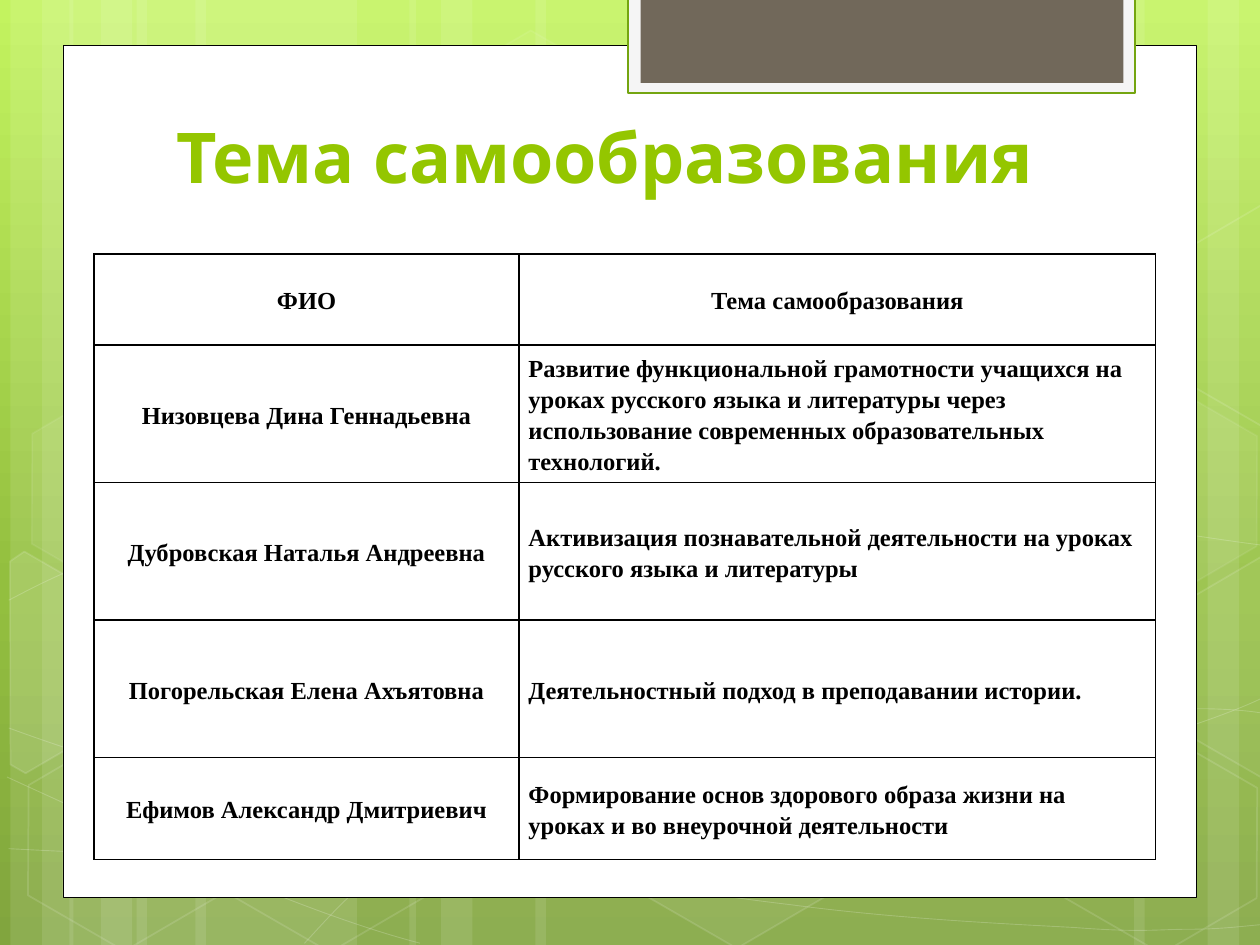
from dataclasses import dataclass
from typing import Optional

from lxml.etree import SubElement
from pptx import Presentation
from pptx.enum.shapes import MSO_SHAPE as Shape
from pptx.enum.text import MSO_ANCHOR as Anchor, PP_ALIGN as Align
from pptx.oxml.ns import qn
from pptx.util import Pt

WHITE, BLACK = "FFFFFF", "000000"
Points = list[tuple[float, float]]


@dataclass
class Look:
    fill: Optional[str] = None
    fill_alpha: int = 100
    line: Optional[str] = None
    line_width: float = 1
    line_alpha: int = 100


@dataclass
class Block:
    left: float
    top: float
    width: float
    height: float
    look: Look
    kind: Shape = Shape.RECTANGLE
    rotation: float = 0


@dataclass
class Outline:
    left: float
    top: float
    points: Points
    look: Look
    rotation: float = 30


@dataclass
class Lettering:
    font: str
    size: float
    color: str


def veil(fill_alpha: int, line_alpha: int) -> Look:
    return Look(WHITE if fill_alpha else None, fill_alpha, WHITE, 1, line_alpha)


def hexagon(left: float, top: float, fill_alpha: int, line_alpha: int) -> Block:
    return Block(left, top, 126, 109.4, veil(fill_alpha, line_alpha), Shape.HEXAGON, 30)


STRIP = Look(WHITE, 10)
STRIPS = [Block(left, 0, width, 540, STRIP, rotation=turn) for left, width, turn in [
    (78, 126, 0), (6, 36, 0), (24, 60, 0), (111.6, 126, 0), (39.6, 36, 0), (57.6, 60, 0),
    (528, 126, 180), (690, 36, 180), (648, 60, 180), (306, 222, 0), (234, 36, 0), (252, 60, 0)]]
CURVE_LOOK = Look(None, 100, WHITE, 0.5, 20)
CURVES = [
    [(5, 485), (44, 487), (83, 489), (137, 488), (191, 487), (258, 486), (330, 479),
     (402, 472), (504, 458), (570, 444), (636, 431), (703, 409), (725, 397)],
    [(5, 343), (26, 332), (47, 321), (87, 310), (128, 300), (186, 284), (250, 279),
     (314, 274), (392, 273), (471, 279), (550, 284), (682, 307), (725, 312)],
    [(4, 444), (91, 484), (178, 523), (240, 539)],
    [(5, 416), (27, 424), (50, 432), (92, 444), (134, 454), (197, 472), (257, 485),
     (317, 497), (392, 510), (452, 517), (512, 525), (576, 528), (614, 530),
     (652, 533), (662, 531), (680, 531), (699, 531), (712, 529), (725, 528)],
    [(174, 539), (187, 525), (200, 510), (217, 498), (235, 485), (259, 470), (279, 460),
     (300, 450), (312, 446), (338, 438), (364, 431), (413, 421), (438, 416),
     (464, 411), (467, 411), (490, 410), (512, 408), (547, 405), (572, 405),
     (597, 404), (638, 405), (638, 405), (654, 405), (670, 405), (686, 405),
     (699, 405), (711, 406), (718, 407), (724, 408), (722, 407), (724, 408)],
]
HEXAGONS = [
    hexagon(240.5, 26, 4, 8), hexagon(357.8, 424, 6, 12), hexagon(7.9, 425.5, 0, 12),
    hexagon(10, 224.6, 7, 8), hexagon(125.3, 426.2, 0, 12), hexagon(542.2, 326.2, 10, 12),
    hexagon(600.5, 427, 0, 12), hexagon(600.5, 226, 7, 8)]
LEFT_CUT = [(0, 9), (4.3, 0), (68.2, 0), (99.2, 55.2), (68.3, 109.4), (58.3, 109.4)]
RIGHT_CUT = [(0, 54.5), (31, 0), (37.7, 0), (97.9, 104.3), (94.9, 109.4), (31.7, 109.4)]
CUT_HEXAGONS = [
    Outline(-23.8, 330.5, LEFT_CUT, veil(10, 12)),
    Outline(660.2, 319.7, RIGHT_CUT, veil(4, 12)),
    Outline(660.2, 118.8, RIGHT_CUT, veil(0, 12))]
PANELS = [
    Block(36, 26, 648, 487, Look(WHITE, line=BLACK, line_width=0.5)),
    Block(359, -1.4, 289.5, 54.7, Look("F5F5F5", line="74A510", line_width=1.25)),
    Block(366, -1.4, 276, 48.8, Look("71685A"))]
TITLE = Lettering("League Spartan", 40, "94C600")
BODY = Lettering("Times New Roman", 14, BLACK)
COLUMNS = [242.8, 363.8]
ROWS = [
    (52, "ФИО", "Тема самообразования"),
    (78.6, "Низовцева Дина Геннадьевна",
     "Развитие функциональной грамотности учащихся на уроках русского языка и литературы "
     "через использование современных образовательных технологий."),
    (78.6, "Дубровская Наталья Андреевна",
     "Активизация познавательной деятельности на уроках русского языка и литературы"),
    (78.6, "Погорельская Елена Ахъятовна", "Деятельностный подход в преподавании истории."),
    (58.3, "Ефимов Александр Дмитриевич",
     "Формирование основ здорового образа жизни на уроках и во внеурочной деятельности")]


def add_color(parent, color: str, alpha: int = 100) -> None:
    node = SubElement(parent, qn("a:srgbClr"), val=color)
    if alpha < 100:
        SubElement(node, qn("a:alpha"), val=str(alpha * 1000))


def paint(fill, color: Optional[str], alpha: int = 100) -> None:
    if color is None:
        fill.background()
        return
    fill.solid()
    add_color(fill._xPr.find(qn("a:solidFill")), color, alpha)


def style(shape, look: Look) -> None:
    shape.shadow.inherit = False
    paint(shape.fill, look.fill, look.fill_alpha)
    paint(shape.line.fill, look.line, look.line_alpha)
    if look.line:
        shape.line.width = Pt(look.line_width)


def draw_block(page, block: Block) -> None:
    shape = page.shapes.add_shape(
        block.kind, Pt(block.left), Pt(block.top), Pt(block.width), Pt(block.height))
    shape.rotation = block.rotation
    if block.kind == Shape.HEXAGON:
        shape.adjustments[0] = 0.285
    style(shape, block.look)


def add_freeform(page, points: Points, look: Look, closed: bool):
    start, *rest = [(Pt(x), Pt(y)) for x, y in points]
    builder = page.shapes.build_freeform(*start)
    builder.add_line_segments(rest, close=closed)
    shape = builder.convert_to_shape()
    style(shape, look)
    return shape


def draw_outline(page, outline: Outline) -> None:
    points = [(outline.left + x, outline.top + y) for x, y in outline.points]
    add_freeform(page, points, outline.look, True).rotation = outline.rotation


def draw_curve(page, knots: Points) -> None:
    shape = add_freeform(page, knots, CURVE_LOOK, False)
    segments = list(shape._element.iter(qn("a:lnTo")))
    track = segments[0].getparent()
    for first in range(0, len(segments), 3):
        bend = SubElement(track, qn("a:cubicBezTo"))
        for segment in segments[first:first + 3]:
            bend.append(segment[0])
            track.remove(segment)


def write(para, text: str, lettering: Lettering, align: Align) -> None:
    para.alignment = align
    span = para.add_run()
    span.text = text
    span.font.name, span.font.size, span.font.bold = lettering.font, Pt(lettering.size), True
    paint(span.font.fill, lettering.color)


def draw_background(page) -> None:
    fill = page.background.fill
    fill.gradient()
    fill.gradient_angle = 270
    stops = next(page._element.iter(qn("a:gsLst")))
    for stop in list(stops):
        stops.remove(stop)
    for place, color in [(0, "C3F35F"), (62, "93BF3F"), (100, "81A53E")]:
        add_color(SubElement(stops, qn("a:gs"), pos=str(place * 1000)), color)


def draw_title(page, text: str) -> None:
    frame = page.shapes.add_textbox(Pt(48), Pt(49), Pt(595.4), Pt(67.7)).text_frame
    frame.word_wrap = True
    frame.vertical_anchor = Anchor.BOTTOM
    write(frame.paragraphs[0], text, TITLE, Align.CENTER)


def fill_cell(cell, text: str, align: Align) -> None:
    cell.vertical_anchor = Anchor.MIDDLE
    cell.margin_left = cell.margin_right = Pt(5.4)
    cell.margin_top = cell.margin_bottom = 0
    for side in ("lnL", "lnR", "lnT", "lnB"):
        border = SubElement(cell._tc.get_or_add_tcPr(), qn(f"a:{side}"), w=str(Pt(1)))
        add_color(SubElement(border, qn("a:solidFill")), BLACK)
    cell.fill.background()
    para = cell.text_frame.paragraphs[0]
    para.line_spacing = 1.15
    write(para, text, BODY, align)


def draw_table(page) -> None:
    table = page.shapes.add_table(
        len(ROWS), len(COLUMNS), Pt(53.8), Pt(145.2), Pt(sum(COLUMNS)),
        Pt(sum(row[0] for row in ROWS))).table
    table.first_row = table.horz_banding = False
    for column, width in zip(table.columns, COLUMNS):
        column.width = Pt(width)
    for index, (height, name, topic) in enumerate(ROWS):
        table.rows[index].height = Pt(height)
        fill_cell(table.cell(index, 0), name, Align.CENTER)
        fill_cell(table.cell(index, 1), topic, Align.LEFT if index else Align.CENTER)


def main() -> None:
    """Build the slide listing teachers and their self-education topics."""
    deck = Presentation()
    deck.slide_width, deck.slide_height = Pt(720), Pt(540)
    page = deck.slides.add_slide(deck.slide_layouts[6])
    draw_background(page)
    for strip in STRIPS:
        draw_block(page, strip)
    for knots in CURVES:
        draw_curve(page, knots)
    for block in HEXAGONS:
        draw_block(page, block)
    for outline in CUT_HEXAGONS:
        draw_outline(page, outline)
    for panel in PANELS:
        draw_block(page, panel)
    draw_title(page, "Тема самообразования")
    draw_table(page)
    deck.save("out.pptx")


if __name__ == "__main__":
    main()
